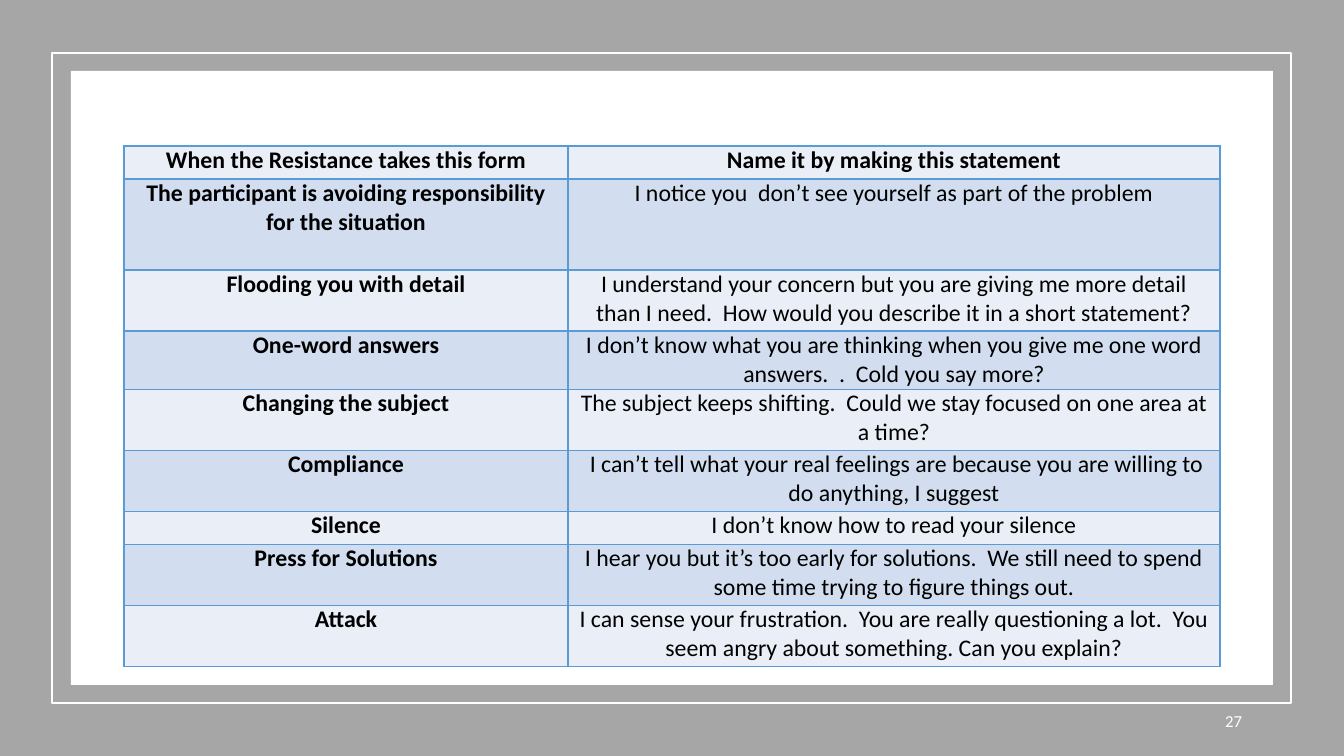
import pptx
import pptx.util
import pptx.dml.color
import pptx.enum.shapes
import pptx.enum.text
from lxml import etree

# Content
ROWS = [  # resistance, statement, row height in px
    ("When the Resistance takes this form", "Name it by making this statement", 33),
    ("The participant is avoiding responsibility for the situation",
     "I notice you  don’t see yourself as part of the problem", 91),
    ("Flooding you with detail",
     "I understand your concern but you are giving me more detail than I need.  "
     "How would you describe it in a short statement?", 61),
    ("One-word answers",
     "I don’t know what you are thinking when you give me one word answers.  .  "
     "Cold you say more?", 58),
    ("Changing the subject",
     "The subject keeps shifting.  Could we stay focused on one area at a time?", 61),
    ("Compliance",
     " I can’t tell what your real feelings are because you are willing to do anything, "
     "I suggest", 61),
    ("Silence", "I don’t know how to read your silence", 33),
    ("Press for Solutions",
     "I hear you but it’s too early for solutions.  We still need to spend some time "
     "trying to figure things out.", 61),
    ("Attack",
     "I can sense your frustration.  You are really questioning a lot.  "
     "You seem angry about something. Can you explain?", 61),
]
SLIDE_NUMBER = "27"
COLORS = {"gray": "A6A6A6", "white": "FFFFFF", "black": "000000",
          "border": "5B9BD5", "light": "EAEFF7", "dark": "D2DEEF"}
FONT = "Calibri"

# Layout in px
SLIDE_W, SLIDE_H = 1344, 756
PANELS = [  # left, top, width, height, fill, line
    (0, 0, SLIDE_W, SLIDE_H, "gray", None),
    (52, 53, 1239, 650, None, "white"),
    (71, 71, 1202, 614, "white", None),
]
TABLE_LEFT, TABLE_TOP = 124, 146
COL_WIDTHS = (444, 652)
CELL_INSET = 9
NUMBER_BOX = (950, 701, 302, 40)
A_NS = "http://schemas.openxmlformats.org/drawingml/2006/main"


def px(n):
    return pptx.util.Emu(round(n * 914400 / 100.8))


def rgb(name):
    return pptx.dml.color.RGBColor.from_string(COLORS[name])


def style(p, size, color, align, bold=False):
    p.alignment = align
    p.font.name = FONT
    p.font.size = pptx.util.Pt(size)
    p.font.bold = bold
    p.font.color.rgb = rgb(color)


def add_borders(cell):
    tcPr = cell._tc.get_or_add_tcPr()
    for side in ("lnL", "lnR", "lnT", "lnB"):
        ln = etree.SubElement(tcPr, f"{{{A_NS}}}{side}", w=str(pptx.util.Pt(1)))
        fill = etree.SubElement(ln, f"{{{A_NS}}}solidFill")
        etree.SubElement(fill, f"{{{A_NS}}}srgbClr", val=COLORS["border"])


def add_panel(s, left, top, width, height, fill, line):
    sp = s.shapes.add_shape(pptx.enum.shapes.MSO_SHAPE.RECTANGLE,
                            px(left), px(top), px(width), px(height))
    sp.shadow.inherit = False
    if fill:
        sp.fill.solid()
        sp.fill.fore_color.rgb = rgb(fill)
    else:
        sp.fill.background()
    if line:
        sp.line.color.rgb = rgb(line)
        sp.line.width = pptx.util.Pt(1)
    else:
        sp.line.fill.background()


def add_resistance_table(s):
    height = sum(row[2] for row in ROWS)
    table = s.shapes.add_table(len(ROWS), len(COL_WIDTHS), px(TABLE_LEFT), px(TABLE_TOP),
                               px(sum(COL_WIDTHS)), px(height)).table
    table.first_row = table.horz_banding = False
    for column, width in zip(table.columns, COL_WIDTHS):
        column.width = px(width)
    for r, (form, statement, row_height) in enumerate(ROWS):
        table.rows[r].height = px(row_height)
        for c, text in enumerate((form, statement)):
            cell = table.cell(r, c)
            cell.margin_left = cell.margin_right = px(CELL_INSET)
            cell.margin_top = cell.margin_bottom = 0
            add_borders(cell)
            cell.fill.solid()
            cell.fill.fore_color.rgb = rgb("dark" if r % 2 else "light")
            cell.text = text
            style(cell.text_frame.paragraphs[0], 17, "black",
                  pptx.enum.text.PP_ALIGN.CENTER, bold=r == 0 or c == 0)


def add_slide_number(s):
    tf = s.shapes.add_textbox(*map(px, NUMBER_BOX)).text_frame
    tf.word_wrap = True
    tf.vertical_anchor = pptx.enum.text.MSO_ANCHOR.MIDDLE
    p = tf.paragraphs[0]
    p.text = SLIDE_NUMBER
    p.space_after = pptx.util.Pt(6)
    style(p, 12, "white", pptx.enum.text.PP_ALIGN.RIGHT)


def main():
    prs = pptx.Presentation()
    prs.slide_width, prs.slide_height = px(SLIDE_W), px(SLIDE_H)
    s = prs.slides.add_slide(prs.slide_layouts[6])

    # Frame, table and footer, back to front
    for panel in PANELS:
        add_panel(s, *panel)
    add_resistance_table(s)
    add_slide_number(s)
    prs.save("out.pptx")


if __name__ == "__main__":
    main()
